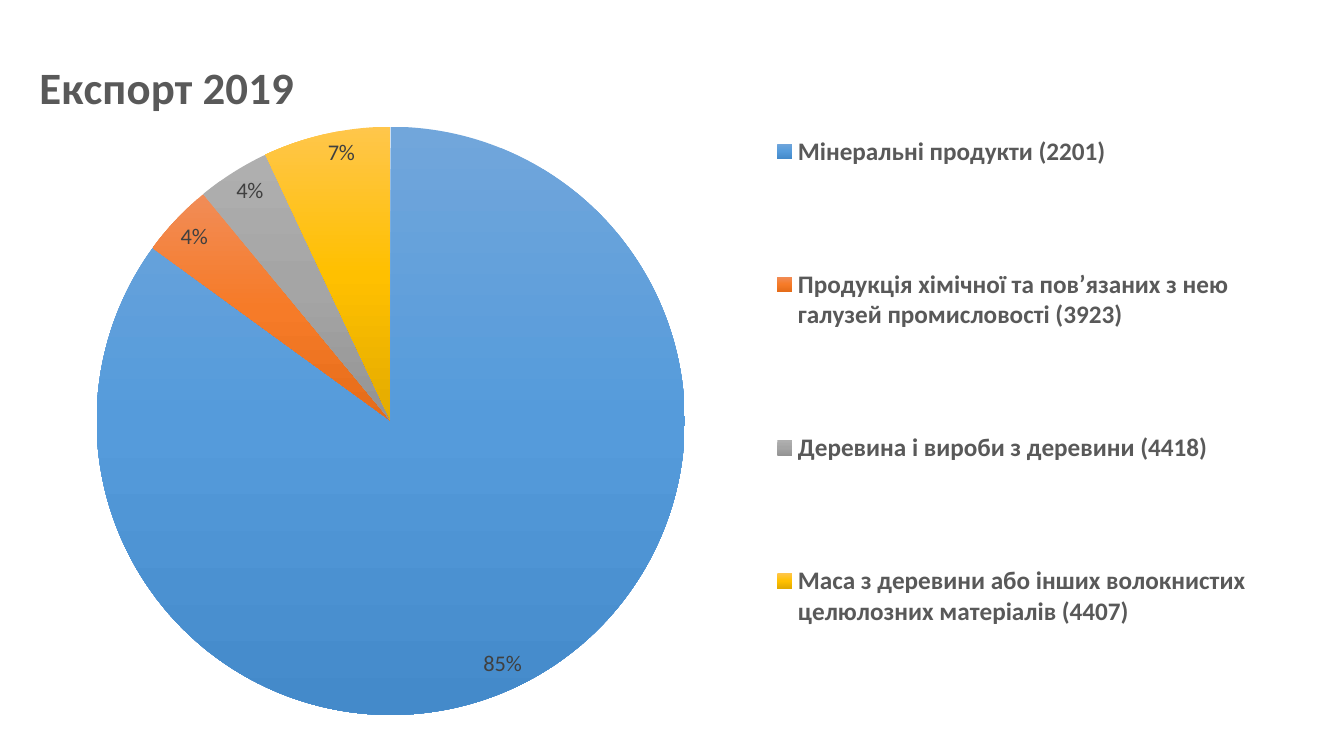
from lxml import etree
from pptx import Presentation
from pptx.chart.data import CategoryChartData
from pptx.dml.color import RGBColor
from pptx.enum.chart import XL_CHART_TYPE as ChartType
from pptx.enum.chart import XL_LABEL_POSITION as LabelPosition
from pptx.enum.chart import XL_LEGEND_POSITION as LegendPosition
from pptx.oxml import parse_xml
from pptx.oxml.ns import nsdecls, qn
from pptx.util import Cm, Pt

COLORS = {"heading": "595959", "label": "404040", "base": "000000"}
FONT = "Calibri"

# Category, percentage, gradient from top to bottom
EXPORTS = [
    ("Мінеральні продукти (2201)", 85, ("71A6DB", "559BDB", "448ACA")),
    ("Продукція хімічної та пов’язаних з нею галузей промисловості (3923)",
     4, ("F18C57", "F67B28", "E56C19")),
    ("Деревина і вироби з деревини (4418)", 4, ("AFAFAF", "A5A5A5", "939393")),
    ("Маса з деревини або інших волокнистих целюлозних матеріалів (4407)",
     7, ("FFC64B", "FFC000", "E3AB00")),
]


def set_font(font, size, color, bold=False):
    font.name = FONT
    font.size = Pt(size)
    font.bold = bold
    font.color.rgb = RGBColor.from_string(COLORS[color])


def set_layout(element, inner=False, **fractions):
    """Place a chart part by fractions of the chart area."""
    layout = element.get_or_add_layout() if hasattr(element, "get_or_add_layout") else None
    if layout is None:
        layout = element.find(qn("c:layout"))
    if layout is None:
        layout = etree.Element(qn("c:layout"))
        element.insert(0, layout)
    for child in list(layout):
        layout.remove(child)
    manual = etree.SubElement(layout, qn("c:manualLayout"))
    if inner:
        etree.SubElement(manual, qn("c:layoutTarget"), val="inner")
    for axis in ("x", "y"):
        etree.SubElement(manual, qn(f"c:{axis}Mode"), val="edge")
    for name, value in fractions.items():
        etree.SubElement(manual, qn(f"c:{name}"), val=str(value))


def fill_gradient(point, colors):
    stops = "".join(
        f'<a:gs pos="{index * 50000}"><a:srgbClr val="{color}"/></a:gs>'
        for index, color in enumerate(colors))
    point.format.fill.gradient()
    properties = point.format.fill._xPr
    gradient = parse_xml(
        f'<a:gradFill {nsdecls("a")} rotWithShape="1"><a:gsLst>{stops}</a:gsLst>'
        '<a:lin ang="5400000" scaled="0"/></a:gradFill>')
    properties.replace(properties.find(qn("a:gradFill")), gradient)
    point.format.line.fill.background()


def add_title(chart, text):
    chart.has_title = True
    paragraph = chart.chart_title.text_frame.paragraphs[0]
    paragraph.text = text
    set_font(paragraph.font, 32, "heading", bold=True)
    chart.chart_title.include_in_layout = False
    set_layout(chart.chart_title._element, x=0.04, y=0.05)


def add_legend(chart):
    chart.has_legend = True
    legend = chart.legend
    legend.position = LegendPosition.RIGHT
    legend.include_in_layout = False
    set_font(legend.font, 18, "heading", bold=True)
    element = legend._element
    layout = etree.Element(qn("c:layout"))
    for old in element.findall(qn("c:layout")):
        element.remove(old)
    element.find(qn("c:legendPos")).addnext(layout)
    set_layout(element, x=0.59, y=0.03, w=0.4, h=0.97)


def add_labels(plot):
    plot.has_data_labels = True
    labels = plot.data_labels
    labels.show_percentage = True
    labels.show_value = False
    labels.number_format = "0%"
    labels.number_format_is_linked = False
    labels.position = LabelPosition.INSIDE_END
    set_font(labels.font, 16, "label")


def add_pie(slide):
    data = CategoryChartData()
    data.categories = [category for category, _, _ in EXPORTS]
    data.add_series("Series 1", [value for _, value, _ in EXPORTS])
    chart = slide.shapes.add_chart(
        ChartType.PIE, Cm(-0.53), Cm(0.3), Cm(32.94), Cm(18.08), data).chart
    set_font(chart.font, 10, "base")
    plot = chart.plots[0]
    plot.vary_by_categories = True
    for index, (_, _, colors) in enumerate(EXPORTS):
        fill_gradient(plot.series[0].points[index], colors)
    add_labels(plot)
    set_layout(chart._chartSpace.chart.plotArea, inner=True,
               x=0.09, y=0.16, w=0.45, h=0.82)
    return chart


def main():
    presentation = Presentation()
    presentation.slide_width = Cm(33.87)
    presentation.slide_height = Cm(19.05)
    slide = presentation.slides.add_slide(presentation.slide_layouts[6])

    # Pie chart with its heading and legend
    chart = add_pie(slide)
    add_title(chart, "Експорт 2019")
    add_legend(chart)

    presentation.save("out.pptx")


if __name__ == "__main__":
    main()
